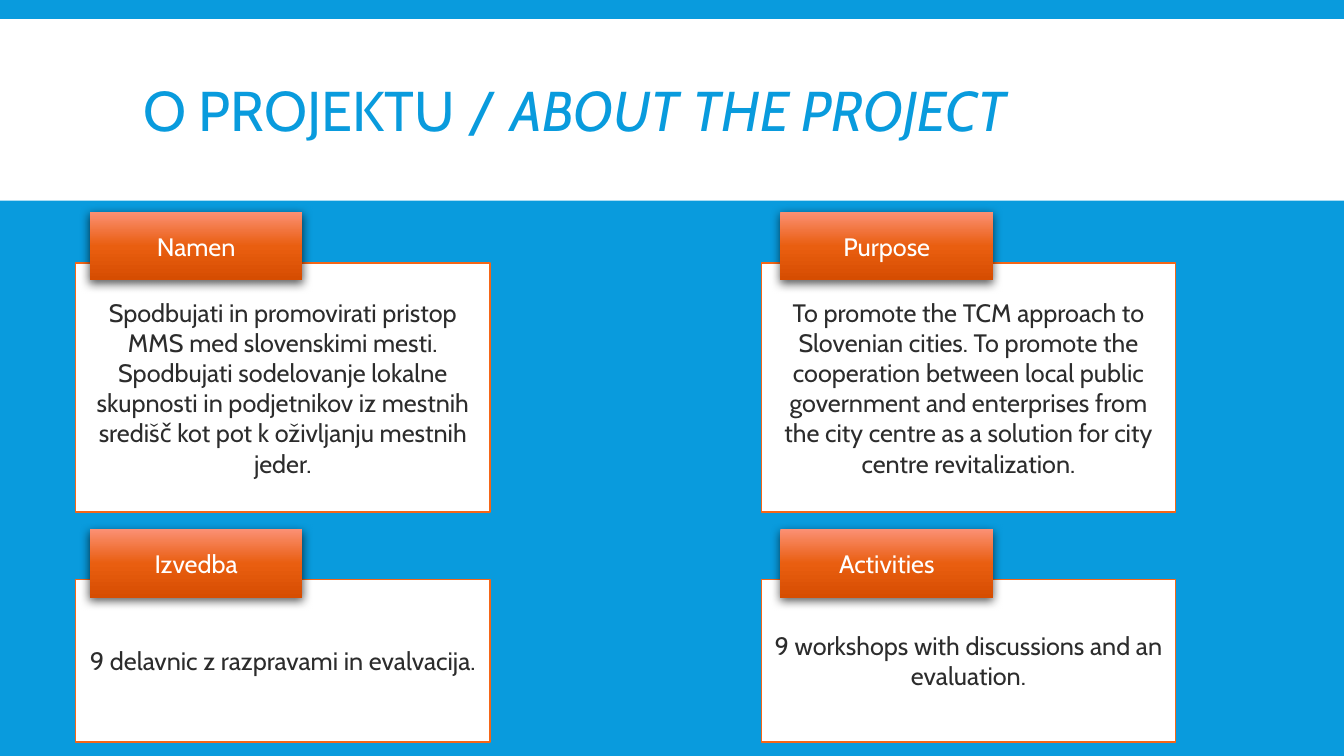
"""Build the bilingual slide about the project, with four labelled cards."""
from pptx import Presentation
from pptx.dml.color import RGBColor
from pptx.enum.shapes import MSO_SHAPE
from pptx.enum.text import MSO_ANCHOR, MSO_AUTO_SIZE, PP_ALIGN
from pptx.oxml import parse_xml
from pptx.oxml.ns import nsdecls
from pptx.util import Inches, Pt

RECT = MSO_SHAPE.RECTANGLE
MIDDLE = MSO_ANCHOR.MIDDLE
NO_FIT = MSO_AUTO_SIZE.NONE
LEFT, CENTER = PP_ALIGN.LEFT, PP_ALIGN.CENTER

BLUE = RGBColor(0x09, 0x9B, 0xDD)
WHITE = RGBColor(0xFF, 0xFF, 0xFF)
ORANGE = RGBColor(0xF5, 0x66, 0x17)
DARK = RGBColor(0x2C, 0x2C, 0x2C)
LABEL_STOPS = [
    (0, RGBColor(0xFB, 0x90, 0x74)),
    (50, RGBColor(0xE9, 0x5E, 0x10)),
    (100, RGBColor(0xD6, 0x4D, 0x01)),
]
FONT = "Cabin"


def add_box(x, y, w, h, text="", color=DARK):
    sp = s.shapes.add_shape(RECT, Inches(x), Inches(y), Inches(w), Inches(h))
    sp.shadow.inherit = False
    sp.fill.solid()
    sp.fill.fore_color.rgb = WHITE
    sp.line.fill.background()
    tf = sp.text_frame
    tf.word_wrap = True
    tf.vertical_anchor = MIDDLE
    p = tf.paragraphs[0]
    p.text = text
    p.alignment = CENTER
    p.font.name = FONT
    p.font.size = Pt(18)
    p.font.color.rgb = color
    return sp


def style_label(sp):
    stops = "".join(
        f'<a:gs pos="{pos * 1000}"><a:srgbClr val="{color}"/></a:gs>'
        for pos, color in LABEL_STOPS
    )
    props = sp.element.spPr
    solid = props.find("{*}solidFill")
    props.replace(solid, parse_xml(
        f'<a:gradFill {nsdecls("a")} rotWithShape="1"><a:gsLst>{stops}</a:gsLst>'
        '<a:lin ang="5400000" scaled="0"/></a:gradFill>'))
    props.find("{*}effectLst").append(parse_xml(
        f'<a:outerShdw {nsdecls("a")} blurRad="{Pt(7)}" dist="{Pt(2.2)}" '
        'dir="5400000" algn="ctr" rotWithShape="0"><a:srgbClr val="000000">'
        '<a:alpha val="63000"/></a:srgbClr></a:outerShdw>'))


prs = Presentation()
prs.slide_width = Inches(13.33)
prs.slide_height = Inches(7.5)
s = prs.slides.add_slide(prs.slide_layouts[5])
s.background.fill.solid()
s.background.fill.fore_color.rgb = BLUE

add_box(0, 0.19, 13.33, 1.8)

title = s.shapes.title
title.element.getparent().append(title.element)
title.left, title.top = Inches(1.32), Inches(0.31)
title.width, title.height = Inches(10.7), Inches(1.65)
tf = title.text_frame
tf.word_wrap = True
tf.auto_size = NO_FIT
tf.vertical_anchor = MIDDLE
p = tf.paragraphs[0]
p.alignment = LEFT
p.line_spacing = 0.85
p.font.name = FONT
p.font.size = Pt(40)
p.font.color.rgb = BLUE
p.add_run().text = "O PROJEKTU / "
r = p.add_run()
r.text = "ABOUT THE PROJECT"
r.font.italic = True

columns = [(0.75, 0.89), (7.55, 7.74)]
rows = [
    (2.1, 2.61, 2.47, [
        ("Namen",
         "Spodbujati in promovirati pristop MMS med slovenskimi mesti. "
         "Spodbujati sodelovanje lokalne skupnosti in podjetnikov iz mestnih "
         "središč kot pot k oživljanju mestnih jeder."),
        ("Purpose",
         "To promote the TCM approach to Slovenian cities. To promote the "
         "cooperation between local public government and enterprises from "
         "the city centre as a solution for city centre revitalization."),
    ]),
    (5.25, 5.75, 1.61, [
        ("Izvedba", "9 delavnic z razpravami in evalvacija."),
        ("Activities", "9 workshops with discussions and an evaluation."),
    ]),
]
for label_y, card_y, card_h, cards in rows:
    for (card_x, label_x), (label, text) in zip(columns, cards):
        card = add_box(card_x, card_y, 4.11, card_h, text)
        card.line.color.rgb = ORANGE
        card.line.width = Pt(1)
        style_label(add_box(label_x, label_y, 2.11, 0.68, label, WHITE))

prs.save("out.pptx")
